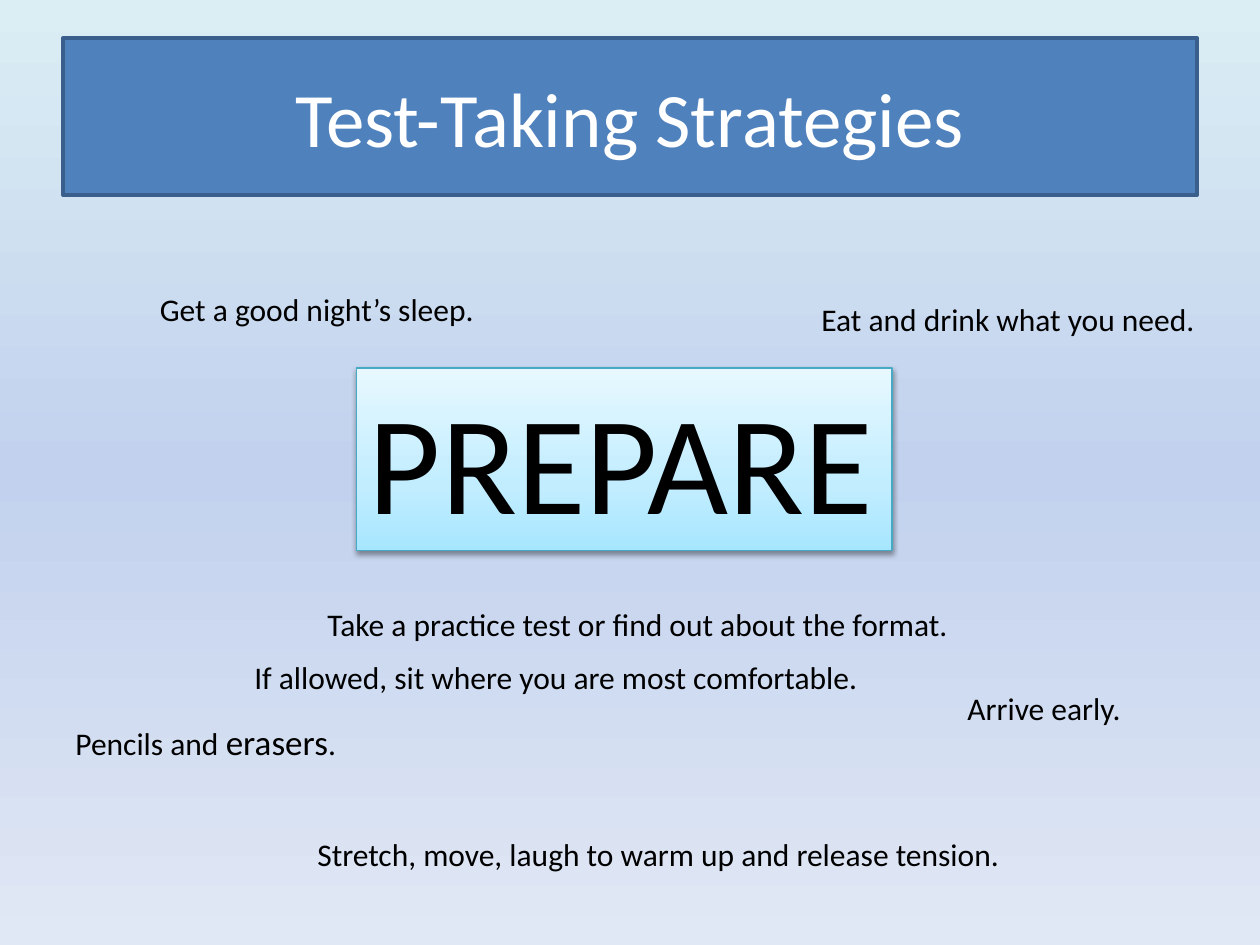
from lxml.etree import SubElement as Sub
from pptx import Presentation
from pptx.dml.color import RGBColor
from pptx.enum.shapes import MSO_SHAPE as Shape
from pptx.enum.text import MSO_ANCHOR as Anchor, MSO_AUTO_SIZE as Fit, PP_ALIGN as Align
from pptx.oxml.ns import qn
from pptx.util import Inches, Pt

TITLE = "Test-Taking Strategies"
SKY = [(0, "DBEEF4"), (50, "C2D1ED"), (100, "E1E8F5")]
AQUA = [(0, "A7E6FF"), (35, "C1EDFF"), (100, "E7F8FF")]
TIPS = [
    ((1.17, 2.25, 2.72, 0.4), False, [("Get a good night’s sleep.", 18)]),
    ((6.42, 2.33, 3.2, 0.4), False, [("Eat and drink what you need.", 18)]),
    ((0.5, 5.67, 2.42, 0.44), True, [("Pencils and ", 18), ("erasers", 20), (".", 18)]),
    ((7.58, 5.42, 1.43, 0.4), False, [("Arrive early.", 18)]),
    ((2.42, 6.58, 5.68, 0.4), False,
     [("Stretch, move, laugh to warm up and release tension.", 18)]),
    ((2.5, 4.75, 5.19, 0.4), True,
     [("Take a practice test or find out about the format.", 18)]),
    ((1.92, 5.17, 5.04, 0.4), False,
     [("If allowed, sit where you are most comfortable.", 18)]),
]


def color(code):
    return RGBColor.from_string(code)


def blend(fill, root, stops, angle):
    fill.gradient()
    grad = root.find(".//" + qn("a:gradFill"))
    for child in list(grad):
        grad.remove(child)
    group = Sub(grad, qn("a:gsLst"))
    for pos, code in stops:
        stop = Sub(group, qn("a:gs"), pos=str(pos * 1000))
        Sub(stop, qn("a:srgbClr"), val=code)
    Sub(grad, qn("a:lin"), ang=str(angle * 60000), scaled="0")


def edge(shape, code, width):
    shape.line.color.rgb = color(code)
    shape.line.width = Pt(width)


def shade(shape):
    shape.shadow.inherit = False
    effects = shape.element.spPr.find(qn("a:effectLst"))
    outer = Sub(effects, qn("a:outerShdw"), blurRad=str(Pt(3.1)), dist=str(Pt(1.6)),
                dir=str(90 * 60000), rotWithShape="0")
    tone = Sub(outer, qn("a:srgbClr"), val="000000")
    Sub(tone, qn("a:alpha"), val="38000")


def write(shape, runs, code="000000", align=Align.LEFT, anchor=Anchor.TOP,
          wrap=False, fit=Fit.SHAPE_TO_FIT_TEXT):
    frame = shape.text_frame
    frame.word_wrap, frame.auto_size = wrap, fit
    frame.vertical_anchor = anchor
    para = frame.paragraphs[0]
    para.alignment = align
    for text, size in runs:
        run = para.add_run()
        run.text = text
        run.font.name, run.font.size = "Calibri", Pt(size)
        run.font.color.rgb = color(code)


def main():
    """Build the test-taking strategies slide."""
    deck = Presentation()
    deck.slide_width, deck.slide_height = Inches(10), Inches(7.5)
    slide = deck.slides.add_slide(deck.slide_layouts[5])
    blend(slide.background.fill, slide.element, SKY, 90)

    title = slide.shapes.title
    title.left, title.top = Inches(0.5), Inches(0.3)
    title.width, title.height = Inches(9), Inches(1.25)
    title.fill.solid()
    title.fill.fore_color.rgb = color("4F81BD")
    edge(title, "3A5F8C", 2)
    write(title, [(TITLE, 44)], "FFFFFF", Align.CENTER, Anchor.MIDDLE, True, Fit.NONE)

    box = slide.shapes.add_shape(Shape.RECTANGLE, *map(Inches, (2.83, 2.92, 4.25, 1.45)))
    blend(box.fill, box.element, AQUA, 270)
    edge(box, "46AAC5", 0.75)
    shade(box)
    write(box, [("PREPARE", 80)])

    for place, wrap, runs in TIPS:
        write(slide.shapes.add_textbox(*map(Inches, place)), runs, wrap=wrap)
    deck.save("out.pptx")


if __name__ == "__main__":
    main()
